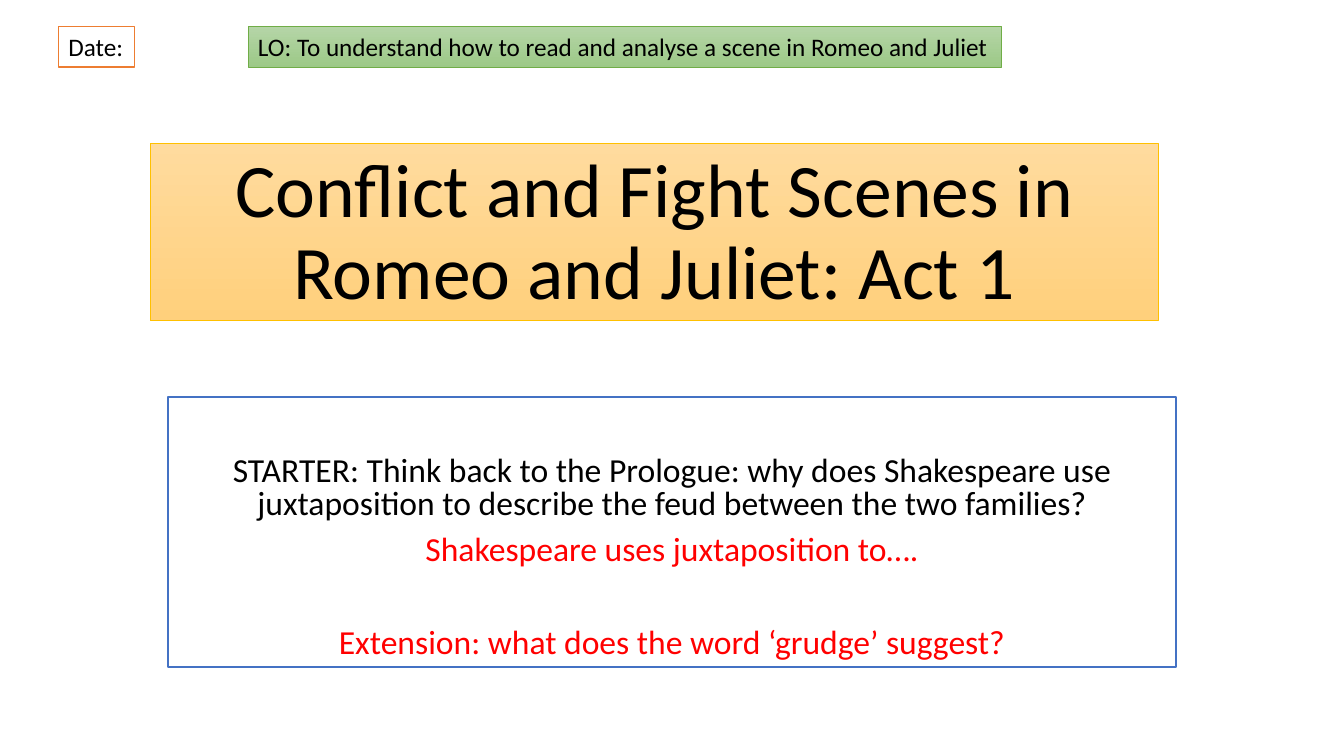
"""Build the opening lesson slide on fight scenes in Romeo and Juliet."""
from dataclasses import dataclass

from pptx import Presentation
from pptx.dml.color import RGBColor
from pptx.enum.text import MSO_ANCHOR, MSO_AUTO_SIZE, PP_ALIGN
from pptx.shapes.autoshape import Shape
from pptx.util import Pt

COLORS = {
    "black": "000000", "white": "FFFFFF", "red": "FF0000",
    "gold": "FFC000", "gold_top": "FFDB9E", "gold_bottom": "FFD07C",
    "green": "70AD47", "green_top": "B5D5A7", "green_bottom": "9CC987",
    "blue": "4472C4", "orange": "ED7D31",
}


@dataclass
class Line:
    """One paragraph of a panel."""
    text: str
    color: str = "black"
    before: float = 0


@dataclass
class Panel:
    """A framed block of text, measured in points."""
    box: tuple[float, float, float, float]
    fills: tuple[str, ...]
    border: str
    border_width: float
    size: float
    lines: list[Line]
    align: PP_ALIGN = PP_ALIGN.CENTER
    spacing: float = 1.0
    anchor: MSO_ANCHOR = MSO_ANCHOR.TOP
    top_inset: float = 3.6
    wrap: bool = True
    auto_size: MSO_AUTO_SIZE = MSO_AUTO_SIZE.NONE


def label(left: float, width: float, fills: tuple[str, ...], border: str,
          border_width: float, text: str) -> Panel:
    """Describe a one-line label in the top row."""
    return Panel((left, 18.9, width, 29.1), fills, border, border_width, 18,
                 [Line(text)], align=PP_ALIGN.LEFT, wrap=False,
                 auto_size=MSO_AUTO_SIZE.SHAPE_TO_FIT_TEXT)


TITLE = Panel((107.5, 102.5, 720, 126.5), ("gold_top", "gold_bottom"), "gold", 0.5, 54,
              [Line("Conflict and Fight Scenes in Romeo and Juliet: Act 1")],
              spacing=0.9, anchor=MSO_ANCHOR.BOTTOM)
STARTER = Panel((120, 283.5, 720, 193), ("white",), "blue", 1, 24, [
    Line("STARTER: Think back to the Prologue: why does Shakespeare use "
         "juxtaposition to describe the feud between the two families?"),
    Line("Shakespeare uses juxtaposition to….", "red", 10),
    Line("Extension: what does the word ‘grudge’ suggest?", "red", 43.4),
], spacing=0.8, top_inset=43)
LABELS = [
    label(41.8, 54.2, ("white",), "orange", 1, "Date:"),
    label(177.2, 538.3, ("green_top", "green_bottom"), "green", 0.5,
          "LO: To understand how to read and analyse a scene in Romeo and Juliet"),
]


def rgb(name: str) -> RGBColor:
    """Look up a named colour."""
    return RGBColor.from_string(COLORS[name])


def paint(sp: Shape, panel: Panel) -> None:
    """Apply the panel's solid or top-to-bottom fill and its border."""
    if len(panel.fills) == 1:
        sp.fill.solid()
        sp.fill.fore_color.rgb = rgb(panel.fills[0])
    else:
        sp.fill.gradient()
        sp.fill.gradient_angle = 270
        for stop, name, position in zip(sp.fill.gradient_stops, panel.fills, (0, 1)):
            stop.color.rgb = rgb(name)
            stop.position = position
    sp.line.color.rgb = rgb(panel.border)
    sp.line.width = Pt(panel.border_width)


def draw(sp: Shape, panel: Panel) -> None:
    """Place, paint and fill a shape with the panel's text."""
    sp.left, sp.top, sp.width, sp.height = map(Pt, panel.box)
    paint(sp, panel)
    tf = sp.text_frame
    tf.word_wrap = panel.wrap
    tf.auto_size = panel.auto_size
    tf.vertical_anchor = panel.anchor
    tf.margin_top = Pt(panel.top_inset)
    for i, line in enumerate(panel.lines):
        p = tf.add_paragraph() if i else tf.paragraphs[0]
        p.text = line.text
        p.alignment = panel.align
        p.line_spacing = panel.spacing
        p.space_before = Pt(line.before)
        p.font.name = "Calibri"
        p.font.size = Pt(panel.size)
        p.font.color.rgb = rgb(line.color)


def main() -> None:
    """Create the slide and save it."""
    prs = Presentation()
    prs.slide_width, prs.slide_height = Pt(960), Pt(540)
    s = prs.slides.add_slide(prs.slide_layouts[0])
    draw(s.shapes.title, TITLE)
    draw(s.placeholders[1], STARTER)
    for panel in LABELS:
        draw(s.shapes.add_textbox(*map(Pt, panel.box)), panel)
    prs.save("out.pptx")


if __name__ == "__main__":
    main()
